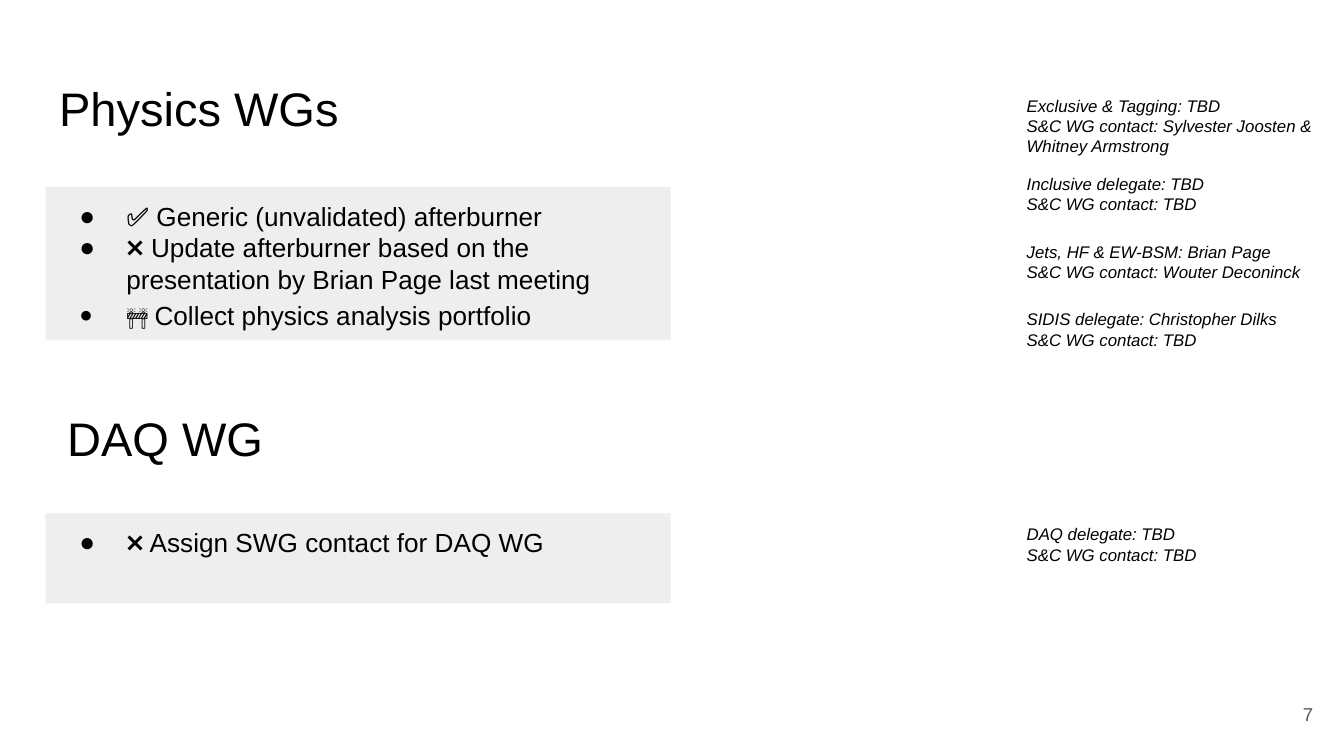
import pptx
import pptx.util
import pptx.dml.color
import pptx.enum.shapes
import pptx.enum.text
import pptx.oxml.ns
from lxml import etree

CELL = 0.1  # inches per grid column and row
COLUMNS = 100
ROWS = COLUMNS * 9 / 16
PANEL_LEFT, PANEL_WIDTH = 3.4, 46.5
CONTACT_LEFT, CONTACT_WIDTH = 75.4, 23.9
ANCHOR = pptx.enum.text.MSO_ANCHOR
ALIGN = pptx.enum.text.PP_ALIGN

PHYSICS_TASKS = [
    ("✅ ", "Generic (unvalidated) afterburner"),
    ("❌ ", "Update afterburner based on the presentation by Brian Page last meeting"),
    ("🚧 ", "Collect physics analysis portfolio"),
]
DAQ_TASKS = [("❌ ", "Assign SWG contact for DAQ WG")]
PHYSICS_CONTACTS = [
    (22, 5, ["SIDIS delegate: Christopher Dilks", "S&C WG contact: TBD"]),
    (6.1, 6.6, ["Exclusive & Tagging: TBD",
                "S&C WG contact: Sylvester Joosten & Whitney Armstrong"]),
    (11.9, 5, ["Inclusive delegate: TBD", "S&C WG contact: TBD"]),
    (17, 5, ["Jets, HF & EW-BSM: Brian Page", "S&C WG contact: Wouter Deconinck"]),
]
DAQ_CONTACTS = [(38, 5, ["DAQ delegate: TBD", "S&C WG contact: TBD"])]


def grid(cells):
    return pptx.util.Inches(cells * CELL)


def color(value):
    return pptx.dml.color.RGBColor.from_string(value)


def fill(shape, value):
    shape.fill.solid()
    shape.fill.fore_color.rgb = color(value)


def place(shape, box):
    shape.left, shape.top, shape.width, shape.height = map(grid, box)


def format_frame(shape, anchor=ANCHOR.TOP):
    frame = shape.text_frame
    frame.word_wrap = True
    frame.auto_size = pptx.enum.text.MSO_AUTO_SIZE.NONE
    frame.vertical_anchor = anchor
    frame.margin_left = frame.margin_right = grid(1)
    frame.margin_top = frame.margin_bottom = grid(1)
    return frame


def format_text(paragraph, size, value="000000", italic=False, align=ALIGN.LEFT):
    paragraph.alignment = align
    paragraph.space_before = paragraph.space_after = pptx.util.Pt(0)
    for run in paragraph.runs:
        run.font.name = "Arial"
        run.font.size = pptx.util.Pt(size)
        run.font.bold = False
        run.font.italic = italic
        run.font.color.rgb = color(value)


def add_bullet(paragraph):
    properties = paragraph._p.get_or_add_pPr()
    properties.set("marL", str(grid(5)))
    properties.set("indent", str(-grid(3.5)))
    qualified = pptx.oxml.ns.qn
    bullet_color = etree.SubElement(properties, qualified("a:buClr"))
    etree.SubElement(bullet_color, qualified("a:srgbClr"), val="000000")
    etree.SubElement(properties, qualified("a:buFont"), typeface="Arial")
    etree.SubElement(properties, qualified("a:buChar"), char="●")


def fill_heading(placeholder, box, text):
    place(placeholder, box)
    frame = format_frame(placeholder)
    frame.text = text
    format_text(frame.paragraphs[0], 25.2)


def fill_tasks(placeholder, box, tasks):
    place(placeholder, box)
    fill(placeholder, "EEEEEE")
    frame = format_frame(placeholder)
    frame.text = "\n".join(text for _, text in tasks)
    for paragraph, (status, text) in zip(frame.paragraphs, tasks):
        add_bullet(paragraph)
        paragraph.text = status
        paragraph.add_run().text = text
        format_text(paragraph, 14)
        if status == "🚧 ":
            paragraph.line_spacing = 1.15
            paragraph.runs[0].font.size = pptx.util.Pt(12)


def add_contacts(slide, contacts):
    """Add one white box for each (top, height, lines) in the right column."""
    for top, height, lines in contacts:
        box = (CONTACT_LEFT, top, CONTACT_WIDTH, height)
        shape = slide.shapes.add_shape(
            pptx.enum.shapes.MSO_SHAPE.RECTANGLE, *map(grid, box))
        shape.shadow.inherit = False
        fill(shape, "FFFFFF")
        shape.line.fill.background()
        frame = format_frame(shape)
        frame.text = "\n".join(lines)
        for paragraph in frame.paragraphs:
            format_text(paragraph, 9, italic=True)


def add_page_number(slide, box, number):
    shape = slide.shapes.add_textbox(*map(grid, box))
    frame = format_frame(shape, ANCHOR.MIDDLE)
    frame.text = number
    format_text(frame.paragraphs[0], 10, "595959", align=ALIGN.RIGHT)


def main():
    presentation = pptx.Presentation()
    presentation.slide_width, presentation.slide_height = grid(COLUMNS), grid(ROWS)
    comparison_layout = presentation.slide_layouts[4]
    slide = presentation.slides.add_slide(comparison_layout)
    physics_title, unused, physics_list, daq_title, daq_list = slide.placeholders
    unused._element.getparent().remove(unused._element)

    fill_heading(physics_title, (PANEL_LEFT, 4.9, 93.2, 6.3), "Physics WGs")
    fill_tasks(physics_list, (PANEL_LEFT, 13.9, PANEL_WIDTH, 11.4), PHYSICS_TASKS)
    add_contacts(slide, PHYSICS_CONTACTS)

    fill_heading(daq_title, (4, 29.5, 54.1, 6.3), "DAQ WG")
    fill_tasks(daq_list, (PANEL_LEFT, 38.2, PANEL_WIDTH, 6.7), DAQ_TASKS)
    add_contacts(slide, DAQ_CONTACTS)

    add_page_number(slide, (92.7, 51, 6, 4.3), "7")
    presentation.save("out.pptx")


if __name__ == "__main__":
    main()
